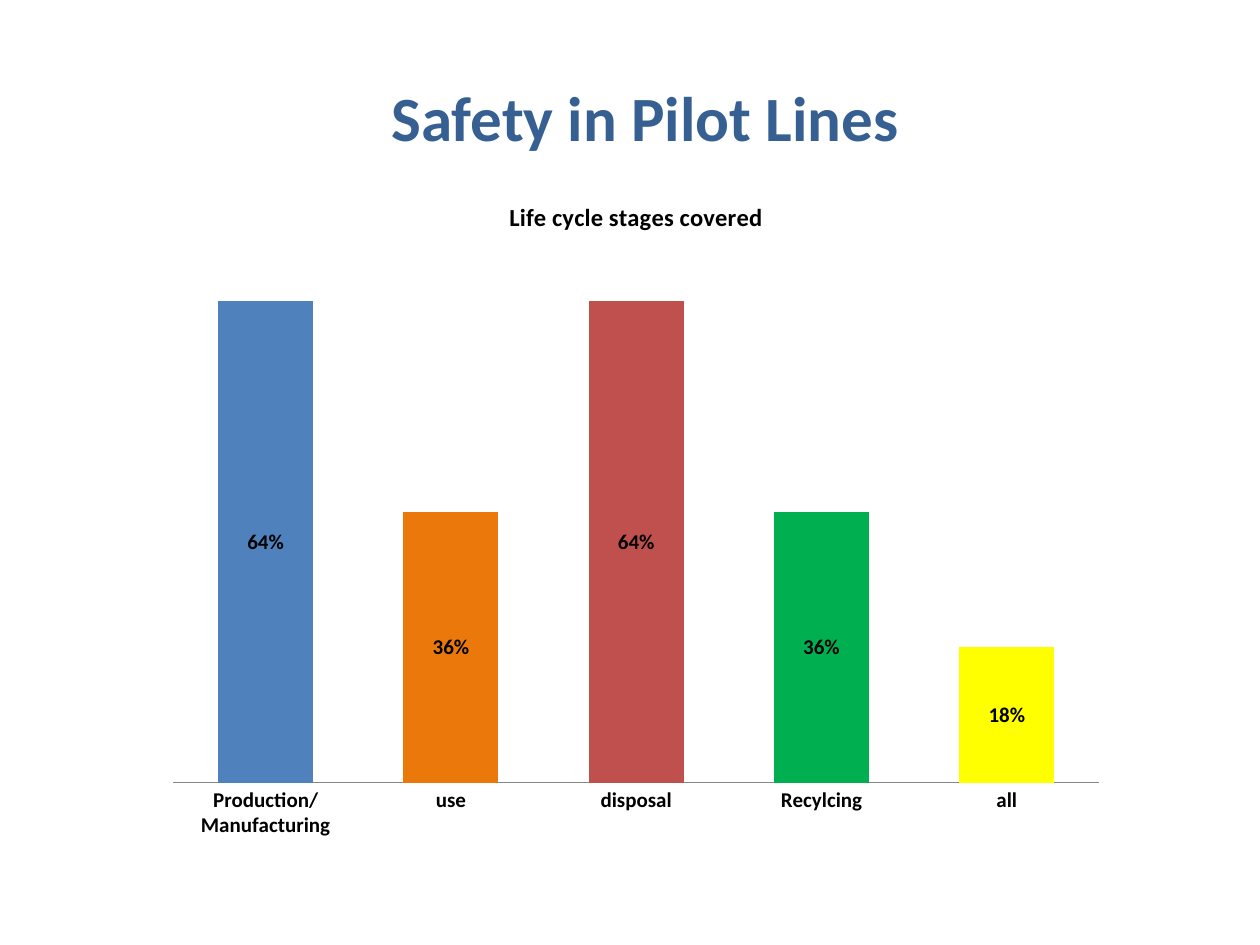
from lxml import etree
from pptx import Presentation
from pptx import util as u
from pptx.chart.data import CategoryChartData
from pptx.dml.color import RGBColor
from pptx.enum import chart as ch
from pptx.enum import text
from pptx.oxml.ns import qn

STAGES = [
    ("Production/Manufacturing", 0.64, "4F81BD"),
    ("use", 0.36, "EA780B"),
    ("disposal", 0.64, "C0504D"),
    ("Recylcing", 0.36, "00B050"),
    ("all", 0.18, "FFFF00"),
]


def color(value):
    """Turn a hex string into a colour."""
    return RGBColor.from_string(value)


def set_font(font, size, value):
    """Apply the bold Calibri style."""
    font.name = "Calibri"
    font.size = u.Pt(size)
    font.bold = True
    font.color.rgb = color(value)


def add_title(slide, title):
    """Add the centred slide title."""
    shape = slide.shapes.add_textbox(
        u.Inches(2.01), u.Inches(0.3), u.Inches(6.22), u.Inches(1.25))
    frame = shape.text_frame
    frame.word_wrap = True
    frame.vertical_anchor = text.MSO_ANCHOR.MIDDLE
    paragraph = frame.paragraphs[0]
    paragraph.text = title
    paragraph.alignment = text.PP_ALIGN.CENTER
    set_font(paragraph.font, 36, "376092")


def set_plot_layout(chart, **fractions):
    """Fix the inner plot area as fractions of the chart."""
    plot_area = chart.plots[0]._element.getparent()
    layout = plot_area.find(qn("c:layout"))
    if layout is None:
        layout = etree.Element(qn("c:layout"))
        plot_area.insert(0, layout)
    manual = etree.SubElement(layout, qn("c:manualLayout"))
    settings = {"layoutTarget": "inner", "xMode": "edge", "yMode": "edge", **fractions}
    for name, value in settings.items():
        etree.SubElement(manual, qn(f"c:{name}")).set("val", str(value))


def style_axes(chart):
    """Show a plain category axis and hide the value axis."""
    category_axis = chart.category_axis
    category_axis.major_tick_mark = ch.XL_TICK_MARK.NONE
    category_axis.format.line.color.rgb = color("868686")
    value_axis = chart.value_axis
    value_axis.minimum_scale = 0
    value_axis.maximum_scale = 0.7
    value_axis.has_major_gridlines = False
    value_axis.visible = False


def style_columns(plot):
    """Colour each column and label its value."""
    plot.gap_width = 95
    plot.overlap = 100
    plot.vary_by_categories = False
    series = plot.series[0]
    for index, (_, _, fill) in enumerate(STAGES):
        point_fill = series.points[index].format.fill
        point_fill.solid()
        point_fill.fore_color.rgb = color(fill)
    labels = series.data_labels
    labels.show_value = True
    labels.number_format = "0%"
    labels.number_format_is_linked = False
    labels.position = ch.XL_LABEL_POSITION.CENTER
    set_font(labels.font, 12, "000000")


def add_stage_chart(slide, title):
    """Add the column chart of life cycle stages."""
    data = CategoryChartData(number_format="0%")
    data.categories = [name for name, _, _ in STAGES]
    data.add_series("Series 1", [share for _, share, _ in STAGES])
    chart = slide.shapes.add_chart(
        ch.XL_CHART_TYPE.COLUMN_STACKED, u.Inches(1.22), u.Inches(1.39),
        u.Inches(7.66), u.Inches(5.36), data).chart
    set_font(chart.font, 12, "000000")
    chart.has_legend = False
    chart.has_title = True
    paragraph = chart.chart_title.text_frame.paragraphs[0]
    paragraph.text = title
    set_font(paragraph.font, 14, "000000")
    style_axes(chart)
    style_columns(chart.plots[0])
    set_plot_layout(chart, x=0.02, y=0.12, w=0.96, h=0.78)


def main():
    """Build and save the slide."""
    presentation = Presentation()
    presentation.slide_width = u.Inches(10)
    presentation.slide_height = u.Inches(7.5)
    slide = presentation.slides.add_slide(presentation.slide_layouts[6])
    add_title(slide, "Safety in Pilot Lines")
    add_stage_chart(slide, "Life cycle stages covered")
    presentation.save("out.pptx")


if __name__ == "__main__":
    main()
